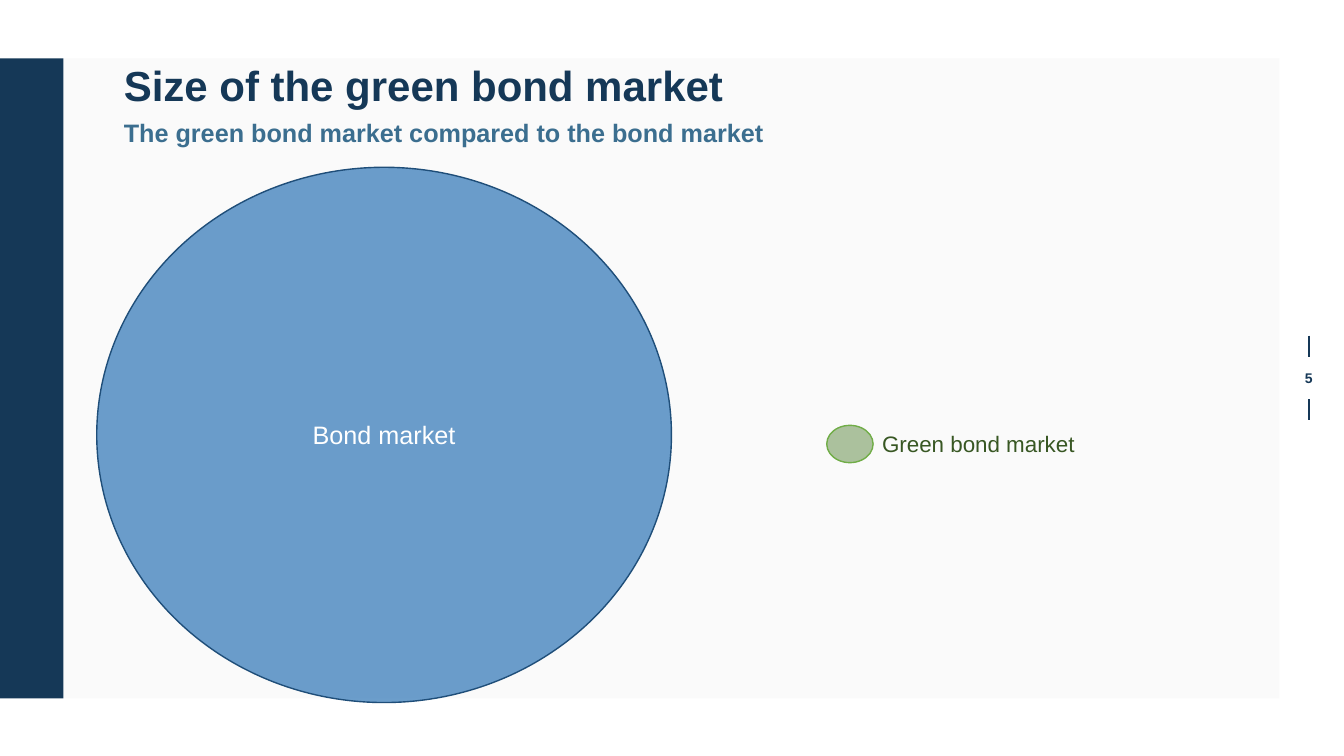
"""Build a slide comparing the green bond market with the bond market."""
from lxml import etree
from pptx import Presentation
from pptx.dml.color import RGBColor
from pptx.enum import shapes, text
from pptx.oxml.ns import qn
from pptx.util import Inches, Pt

NAVY = "153857"
RECT, OVAL = shapes.MSO_SHAPE.RECTANGLE, shapes.MSO_SHAPE.OVAL
LEFT, CENTER = text.PP_ALIGN.LEFT, text.PP_ALIGN.CENTER
TOP, MIDDLE = text.MSO_ANCHOR.TOP, text.MSO_ANCHOR.MIDDLE


def rgb(color):
    return RGBColor.from_string(color)


def write(sp, words, size, color, bold=False, align=LEFT, anchor=MIDDLE):
    tf = sp.text_frame
    tf.word_wrap = True
    tf.vertical_anchor = anchor
    p = tf.paragraphs[0]
    p.text = words
    p.alignment = align
    p.font.name, p.font.size, p.font.bold = "Arial", Pt(size), bold
    p.font.color.rgb = rgb(color)
    return p


prs = Presentation()
prs.slide_width, prs.slide_height = Inches(13.33), Inches(7.5)
s = prs.slides.add_slide(prs.slide_layouts[6])

for y in (3.33, 3.96):
    tick = s.shapes.add_connector(shapes.MSO_CONNECTOR.STRAIGHT, Inches(12.98), Inches(y),
                                  Inches(12.98), Inches(y + 0.21))
    tick.line.color.rgb = rgb(NAVY)
    tick.line.width = Pt(1.5)
    etree.SubElement(tick._element.spPr, qn("a:effectLst"))

for kind, box, fill, alpha, line, label in (
    (RECT, (0.63, 0.58, 12.06, 6.35), "FAFAFA", 100, None, None),
    (RECT, (0, 0.58, 0.63, 6.35), NAVY, 100, None, None),
    (OVAL, (0.96, 1.66, 5.7, 5.31), "2E75B6", 70, "1F4E79", "Bond market"),
    (OVAL, (8.2, 4.22, 0.46, 0.37), "548235", 47, "70AD47", None),
):
    sp = s.shapes.add_shape(kind, *map(Inches, box))
    sp.shadow.inherit = False
    sp.fill.solid()
    sp.fill.fore_color.rgb = rgb(fill)
    if alpha < 100:
        clr = sp._element.spPr.find(qn("a:solidFill"))[0]
        etree.SubElement(clr, qn("a:alpha"), val=str(alpha * 1000))
    if line:
        sp.line.color.rgb = rgb(line)
        sp.line.width = Pt(1)
    else:
        sp.line.fill.background()
    if label:
        write(sp, label, 18, "FFFFFF", align=CENTER)

for words, box, size, color, bold, align, anchor, spacing in (
    ("Size of the green bond market", (1.13, 0.53, 9.03, 0.62), 30, NAVY, True, LEFT, MIDDLE, 1.0),
    ("The green bond market compared to the bond market", (1.13, 1.15, 9.03, 0.39),
     18, "3B6E8F", True, LEFT, TOP, 0.9),
    ("Green bond market", (8.65, 4.22, 2.28, 0.37), 16, "385723", False, LEFT, MIDDLE, 1.0),
    ("5", (12.66, 3.62, 0.64, 0.21), 10, NAVY, True, CENTER, TOP, 1.0),
):
    sp = s.shapes.add_textbox(*map(Inches, box))
    p = write(sp, words, size, color, bold, align, anchor)
    p.line_spacing = spacing

prs.save("out.pptx")
